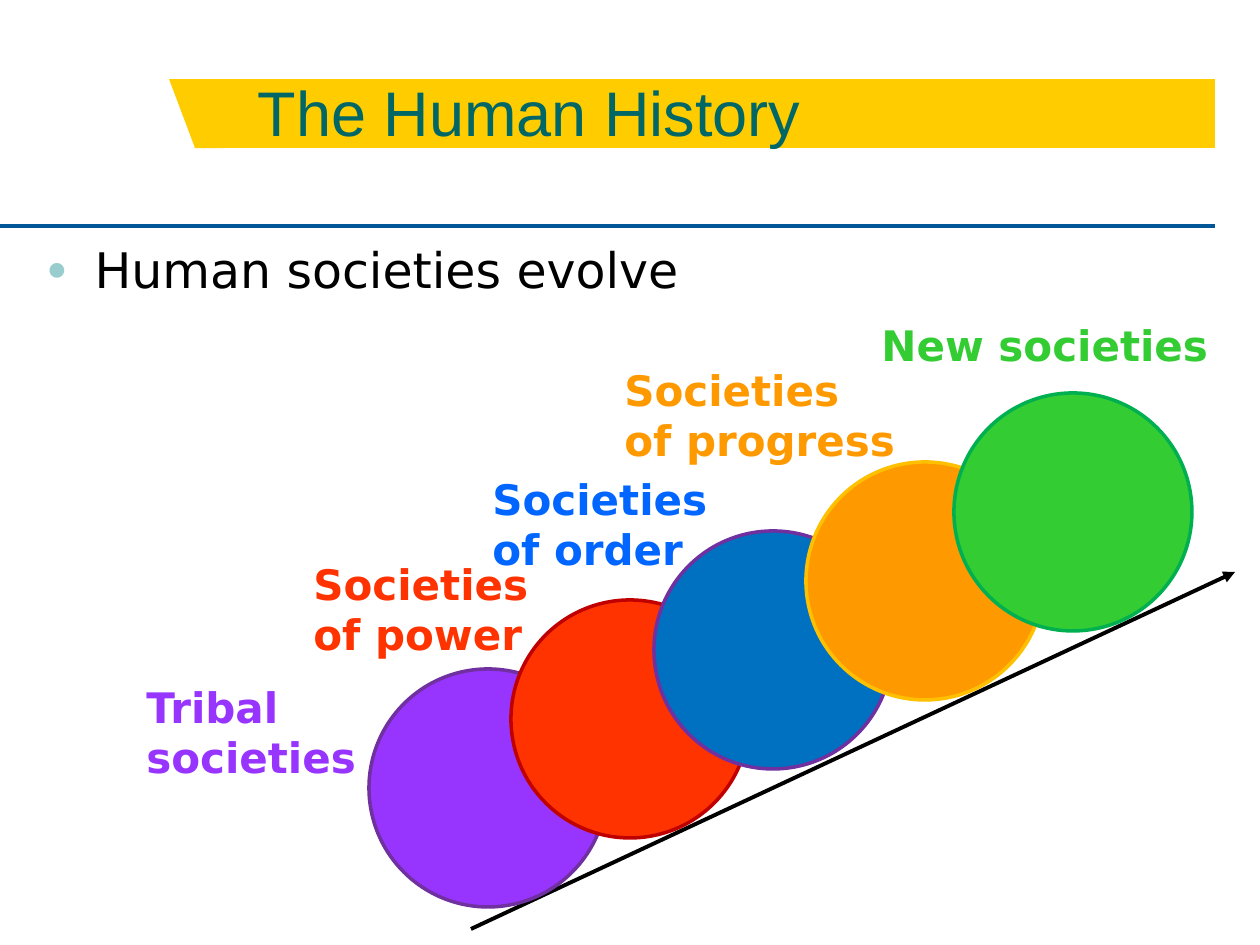
from pptx import Presentation
from pptx.dml.color import RGBColor
from pptx.enum.shapes import MSO_CONNECTOR, MSO_SHAPE
from pptx.enum.text import MSO_ANCHOR, MSO_AUTO_SIZE, PP_ALIGN
from pptx.oxml.ns import qn
from pptx.util import Emu, Pt
from lxml.etree import SubElement

PX = 914400 / 126  # EMU in one px

THEME = {
    "banner": "FFCC00", "rule": "005696", "arrow": "000000", "bullet": "99CCCC",
    "title": {"name": "Arial", "size": Pt(36), "color": "006666"},
    "body": {"name": "DejaVu Sans", "size": Pt(28), "color": "000000"},
    "label": {"name": "DejaVu Sans", "size": Pt(24), "bold": True},
    "line": Pt(2.25), "outline": Pt(2),
}

TITLE = "The Human History"
BODY = "Human societies evolve"
# label lines, label box, label colour, circle left, circle fill, circle outline
SOCIETIES = [
    (("Tribal", "societies"), (134, 675, 240, 115), "9735FF", 369, "9735FF", "7030A0"),
    (("Societies", "of power"), (301, 552, 245, 115), "FF3300", 511, "FF3300", "C00000"),
    (("Societies", "of order"), (480, 467, 245, 115), "0066FF", 654, "0070C0", "7030A0"),
    (("Societies", "of progress"), (612, 358, 300, 115), "FF9900", 806, "FF9900", "FFC000"),
    (("New societies",), (869, 313, 358, 63), "33CC33", 954, "33CC33", "00B050"),
]
CIRCLE, FIRST_TOP, RISE = 238, 669, 69

TITLE_BOX = (245, 42, 953, 113)
BODY_BOX = (34, 233, 1181, 101)
BANNER_BAR = (223, 79, 992, 69)
BANNER_TIP = [(169, 79), (223, 79), (223, 148), (195, 148)]
RULE = (0, 226, 1215, 226)
ARROW = (471, 929, 1235, 572)


def emu(*lengths):
    return [Emu(round(v * PX)) for v in lengths]


def paint(shape, fill, outline=None):
    shape.shadow.inherit = False
    shape.fill.solid()
    shape.fill.fore_color.rgb = RGBColor.from_string(fill)
    if outline:
        shape.line.color.rgb = RGBColor.from_string(outline)
        shape.line.width = THEME["outline"]
    else:
        shape.line.fill.background()


def add_line(s, ends, color):
    line = s.shapes.add_connector(MSO_CONNECTOR.STRAIGHT, *emu(*ends))
    line.line.color.rgb = RGBColor.from_string(color)
    line.line.width = THEME["line"]
    SubElement(line._element.spPr, qn("a:effectLst"))
    return line


def place(shape, box):
    shape.left, shape.top, shape.width, shape.height = emu(*box)


def write(tf, text, style, anchor=MSO_ANCHOR.TOP, wrap=True):
    tf.word_wrap, tf.vertical_anchor = wrap, anchor
    tf.auto_size = MSO_AUTO_SIZE.NONE if wrap else MSO_AUTO_SIZE.SHAPE_TO_FIT_TEXT
    p = tf.paragraphs[0]
    p.text = text
    p.alignment = PP_ALIGN.LEFT
    p.space_before = Pt(0)
    for r in p.runs:
        for name, value in style.items():
            if name == "color":
                r.font.color.rgb = RGBColor.from_string(value)
            else:
                setattr(r.font, name, value)
    return p


def add_bullet(p, indent):
    pPr = p._p.get_or_add_pPr()
    pPr.set("marL", str(indent))
    pPr.set("indent", str(-indent))
    color = SubElement(pPr, qn("a:buClr"))
    SubElement(color, qn("a:srgbClr"), val=THEME["bullet"])
    SubElement(pPr, qn("a:buSzPct"), val="70000")
    SubElement(pPr, qn("a:buChar"), char="●")


def add_banner(s):
    pen = s.shapes.build_freeform(*BANNER_TIP[0], scale=PX)
    pen.add_line_segments(BANNER_TIP[1:], close=True)
    paint(pen.convert_to_shape(), THEME["banner"])
    bar = s.shapes.add_shape(MSO_SHAPE.RECTANGLE, *emu(*BANNER_BAR))
    paint(bar, THEME["banner"])


def add_texts(s):
    title, body = s.shapes.title, s.placeholders[1]
    for holder, box in ((title, TITLE_BOX), (body, BODY_BOX)):
        place(holder, box)
        s.shapes._spTree.append(holder._element)  # in front of the banner
    write(title.text_frame, TITLE, THEME["title"], MSO_ANCHOR.BOTTOM)
    add_bullet(write(body.text_frame, BODY, THEME["body"]), emu(48)[0])


def add_societies(s):
    for i, (_, _, _, left, fill, outline) in enumerate(SOCIETIES):
        box = emu(left, FIRST_TOP - i * RISE, CIRCLE, CIRCLE)
        paint(s.shapes.add_shape(MSO_SHAPE.OVAL, *box), fill, outline)
    for lines, box, color, *_ in SOCIETIES:
        tf = s.shapes.add_textbox(*emu(*box)).text_frame
        write(tf, "\v".join(lines), {**THEME["label"], "color": color}, wrap=False)


def main():
    prs = Presentation()
    prs.slide_width, prs.slide_height = emu(1260, 945)
    s = prs.slides.add_slide(prs.slide_layouts[1])
    add_line(s, RULE, THEME["rule"])
    add_banner(s)
    add_texts(s)
    arrow = add_line(s, ARROW, THEME["arrow"])
    SubElement(arrow.line._get_or_add_ln(), qn("a:tailEnd"), type="triangle")
    add_societies(s)
    prs.save("out.pptx")


if __name__ == "__main__":
    main()
